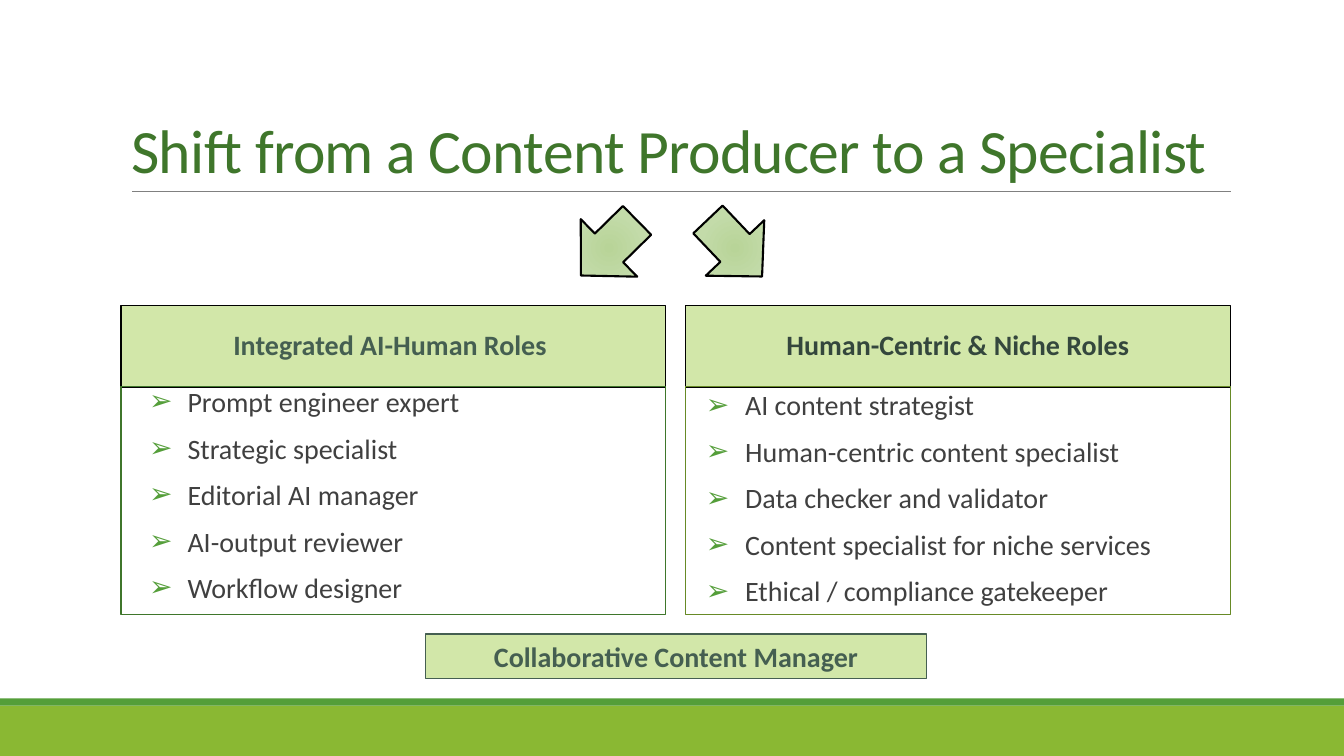
"""Builds a slide on the shift from content producer to specialist."""
from pptx import Presentation
from pptx.dml.color import RGBColor
from pptx.enum.shapes import MSO_CONNECTOR, MSO_SHAPE
from pptx.enum.text import MSO_ANCHOR, MSO_AUTO_SIZE, PP_ALIGN
from pptx.oxml import parse_xml
from pptx.oxml.ns import nsdecls, qn
from pptx.util import Inches, Pt

RECTANGLE, DOWN_ARROW = MSO_SHAPE.RECTANGLE, MSO_SHAPE.DOWN_ARROW
STRAIGHT = MSO_CONNECTOR.STRAIGHT
TOP, MIDDLE, BOTTOM = MSO_ANCHOR.TOP, MSO_ANCHOR.MIDDLE, MSO_ANCHOR.BOTTOM
LEFT, CENTER = PP_ALIGN.LEFT, PP_ALIGN.CENTER
NO_FIT = MSO_AUTO_SIZE.NONE

COLORS = {
    "band": "8AB833", "stripe": "549E39", "rule": "808080", "title": "3F762B",
    "panel": "D2E7A9", "black": "000000", "slate": "455F51",
    "dark_slate": "34473D", "olive": "678A26", "body": "404040",
}
ARROW_STOPS = [(0, "B8D498"), (45, "C3DBA9"), (100, "CAE3AF")]
FONT = "Calibri"
COMPARISON_LAYOUT = 4
SLIDE_W, SLIDE_H = 13.33, 7.5
MARGIN, COLUMN_W, GUTTER = 1.2, 5.4, 0.2
HEADER_TOP, HEADER_H = 3.03, 0.81
LIST_TOP, LIST_H = 3.83, 2.27

ROLES = [
    {"header": "Integrated AI-Human Roles ", "ink": "slate", "border": "title",
     "indent": (0.66, -0.38), "first_spacing": 0.8,
     "roles": ["Prompt engineer expert", "Strategic specialist",
               "Editorial AI manager", "AI-output reviewer",
               "Workflow designer"]},
    {"header": "Human-Centric & Niche Roles", "ink": "dark_slate",
     "border": "olive", "indent": (0.59, -0.39), "first_spacing": 0.9,
     "roles": ["AI content strategist", "Human-centric content specialist",
               "Data checker and validator",
               "Content specialist for niche services",
               "Ethical / compliance gatekeeper"]},
]


def rgb(name):
    """Return the palette colour with this name."""
    return RGBColor.from_string(COLORS[name])


def place(shape, left, top, width, height):
    """Move and size a shape in inches."""
    shape.left, shape.top = Inches(left), Inches(top)
    shape.width, shape.height = Inches(width), Inches(height)


def paint(shape, fill=None, border=None, weight=0.75):
    """Set the fill and outline of a shape."""
    if fill:
        shape.fill.solid()
        shape.fill.fore_color.rgb = rgb(fill)
    else:
        shape.fill.background()
    if border:
        shape.line.color.rgb = rgb(border)
        shape.line.width = Pt(weight)
    else:
        shape.line.fill.background()


def write(shape, text, ink, size=20, bold=False, align=CENTER, anchor=MIDDLE):
    """Write formatted text into a shape."""
    frame = shape.text_frame
    frame.text = text
    frame.word_wrap = True
    frame.auto_size = NO_FIT
    frame.vertical_anchor = anchor
    for paragraph in frame.paragraphs:
        paragraph.alignment = align
        for run in paragraph.runs:
            run.font.name, run.font.size, run.font.bold = FONT, Pt(size), bold
            run.font.color.rgb = rgb(ink)
    return frame.paragraphs


def space(paragraph, line, before=12, after=2):
    """Set line spacing and the gaps around a paragraph."""
    paragraph.line_spacing = line
    paragraph.space_before, paragraph.space_after = Pt(before), Pt(after)


def add_bullet(paragraph, indent):
    """Give a paragraph a green arrow bullet with a hanging indent."""
    properties = paragraph._p.get_or_add_pPr()
    properties.set("marL", str(Inches(indent[0])))
    properties.set("indent", str(Inches(indent[1])))
    for xml in (
        f'<a:buClr {nsdecls("a")}><a:srgbClr val="{COLORS["stripe"]}"/></a:buClr>',
        f'<a:buFont {nsdecls("a")} typeface="{FONT}"/>',
        f'<a:buChar {nsdecls("a")} char="➢"/>',
    ):
        properties.append(parse_xml(xml))


def add_box(slide, left, top, width, height, fill, border=None):
    """Add a flat rectangle."""
    box = slide.shapes.add_shape(RECTANGLE, 0, 0, 0, 0)
    place(box, left, top, width, height)
    box.shadow.inherit = False
    paint(box, fill, border)
    return box


def add_rule(slide, left, right, top):
    """Add the thin line under the title."""
    rule = slide.shapes.add_connector(
        STRAIGHT, Inches(left), Inches(top), Inches(right), Inches(top))
    rule.line.color.rgb = rgb("rule")
    rule.line.width = Pt(0.5)
    rule._element.spPr.append(parse_xml(f'<a:effectLst {nsdecls("a")}/>'))


def add_arrow(slide, left, rotation):
    """Add a tilted arrow with a radial gradient."""
    arrow = slide.shapes.add_shape(DOWN_ARROW, 0, 0, 0, 0)
    place(arrow, left, 2.07, 0.8, 0.78)
    arrow.rotation = rotation
    arrow.shadow.inherit = False
    paint(arrow, "panel", "black", 1.5)
    stops = "".join(
        f'<a:gs pos="{share * 1000}"><a:srgbClr val="{color}"/></a:gs>'
        for share, color in ARROW_STOPS)
    gradient = parse_xml(
        f'<a:gradFill {nsdecls("a")} rotWithShape="1"><a:gsLst>{stops}</a:gsLst>'
        '<a:path path="circle"><a:fillToRect l="100000" t="100000" '
        'r="100000" b="100000"/></a:path></a:gradFill>')
    properties = arrow._element.spPr
    properties.replace(properties.find(qn("a:solidFill")), gradient)


def fill_title(title):
    """Place and write the slide title."""
    place(title, MARGIN, 0.31, 11, 1.59)
    heading = write(title, "Shift from a Content Producer to a Specialist ",
                    "title", 44, anchor=BOTTOM)[0]
    heading.line_spacing = 0.85
    heading.runs[0].font._element.set("spc", "-50")


def fill_column(header, listing, column, content):
    """Fill the header and role list of one column."""
    left = MARGIN + column * (COLUMN_W + GUTTER)
    place(header, left, HEADER_TOP, COLUMN_W, HEADER_H)
    paint(header, "panel", "black")
    space(write(header, content["header"], content["ink"], bold=True)[0], 0.9)

    place(listing, left, LIST_TOP, COLUMN_W, LIST_H)
    paint(listing, border=content["border"])
    roles = write(listing, "\n".join(content["roles"]), "body",
                  align=LEFT, anchor=TOP)
    listing.text_frame.margin_left = listing.text_frame.margin_right = 0
    for number, role in enumerate(roles):
        space(role, 0.8 if number else content["first_spacing"])
        add_bullet(role, content["indent"])


def main():
    """Build and save the slide."""
    deck = Presentation()
    deck.slide_width, deck.slide_height = Inches(SLIDE_W), Inches(SLIDE_H)
    slide = deck.slides.add_slide(deck.slide_layouts[COMPARISON_LAYOUT])
    add_box(slide, 0, 7, SLIDE_W, 0.5, "band")
    add_box(slide, 0, 6.93, SLIDE_W, 0.07, "stripe")
    add_rule(slide, 1.31, 12.21, 1.9)

    title, *bodies = slide.placeholders
    fill_title(title)
    for column, content in enumerate(ROLES):
        header, listing = bodies[2 * column:2 * column + 2]
        fill_column(header, listing, column, content)

    manager = add_box(slide, 4.22, 6.29, 4.97, 0.44, "panel", "slate")
    write(manager, "Collaborative Content Manager", "slate", bold=True)
    add_arrow(slide, 5.64, 45.5)
    add_arrow(slide, 6.89, 316.5)
    deck.save("out.pptx")


if __name__ == "__main__":
    main()
